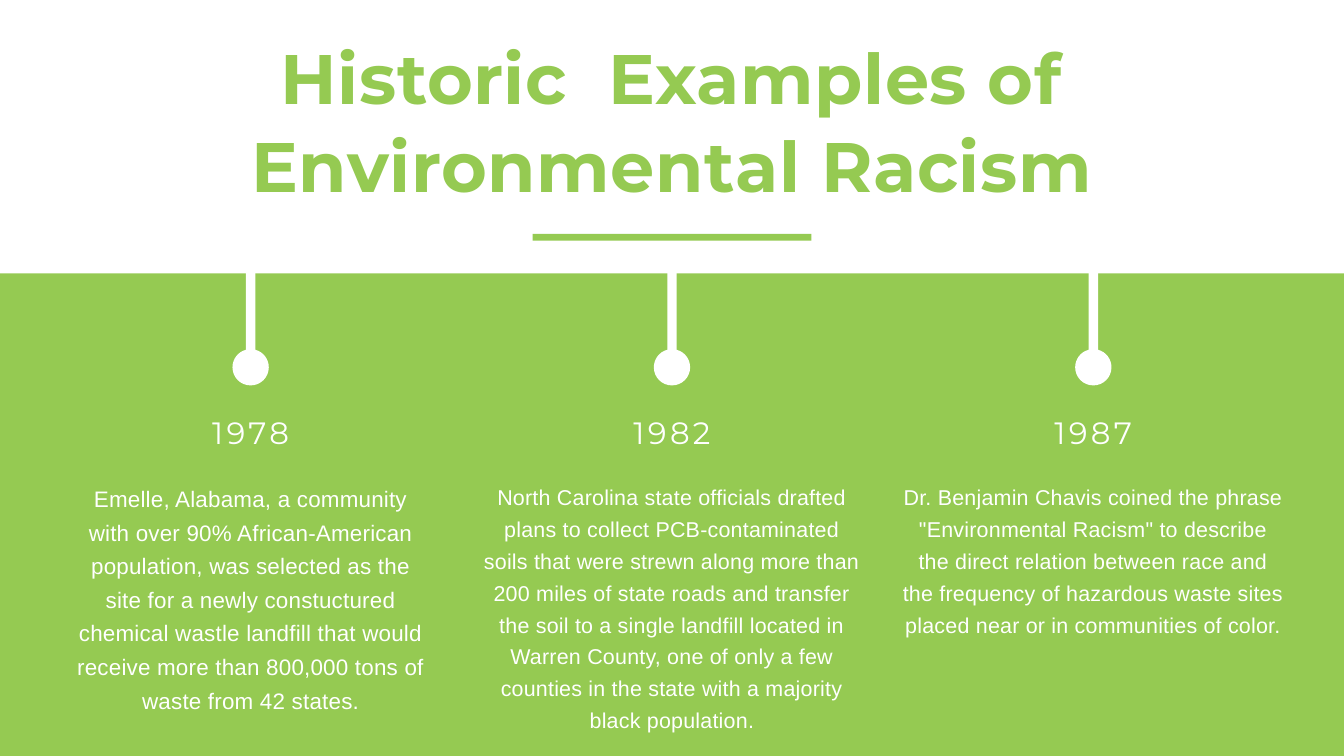
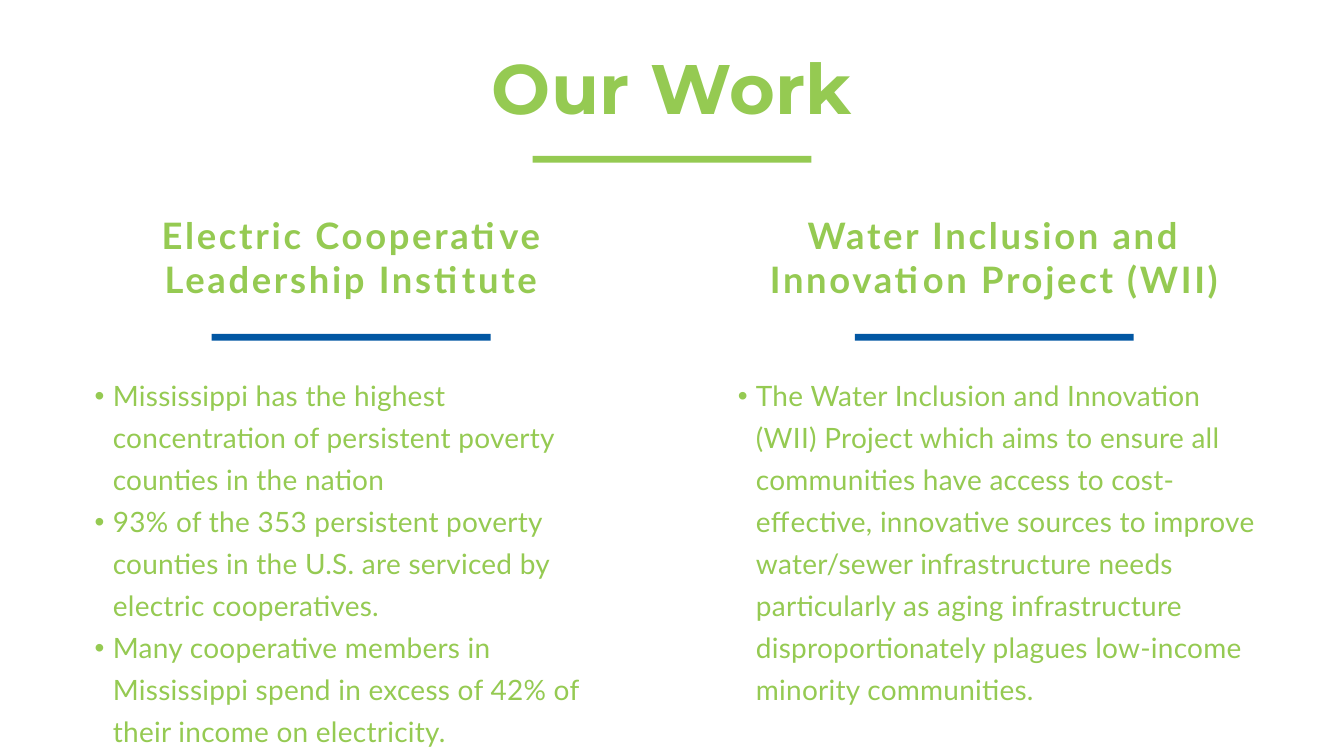
from dataclasses import dataclass

from lxml import etree
from pptx import Presentation
from pptx import util as u
from pptx.dml.color import RGBColor
from pptx.enum import shapes, text
from pptx.oxml import ns

EVENTS = [
    dict(year="1978", width=5.22, height=3.35, size=24, lead=36,
         story="Emelle, Alabama, a community with over 90% African-American "
               "population, was selected as the site for a newly constuctured "
               "chemical wastle landfill that would receive more than 800,000 "
               "tons of waste from 42 states."),
    dict(year="1982", width=5.69, height=3.72, size=23, lead=34.05,
         story="North Carolina state officials drafted plans to collect "
               "PCB-contaminated soils that were strewn along more than 200 "
               "miles of state roads and transfer the soil to a single "
               "landfill located in Warren County, one of only a few counties "
               "in the state with a majority black population."),
    dict(year="1987", width=5.69, height=2.31, size=23, lead=34.05,
         story="Dr. Benjamin Chavis coined the phrase \"Environmental "
               "Racism\" to describe the direct relation between race and the "
               "frequency of hazardous waste sites placed near or in "
               "communities of color."),
]
PROJECTS = [
    dict(name=["Electric Cooperative", "Leadership Institute"], height=5.58,
         points=["Mississippi has the highest concentration of persistent "
                 "poverty counties in the nation",
                 "93% of the 353 persistent poverty counties in the U.S. are "
                 "serviced by electric cooperatives.",
                 "Many cooperative members in Mississippi spend in excess of "
                 "42% of their income on electricity."]),
    dict(name=["Water Inclusion and Innovation Project (WII)"], height=4.95,
         points=["The Water Inclusion and Innovation (WII) Project which aims "
                 "to ensure all communities have access to cost-effective, "
                 "innovative sources to improve water/sewer infrastructure "
                 "needs particularly as aging infrastructure "
                 "disproportionately plagues low-income minority "
                 "communities."]),
]
# A lying pin, dot on the left: one point is a line, three are a curve.
PIN = [
    [(0.53, 0.2)],
    [(0.5, 0.08), (0.39, 0), (0.27, 0)],
    [(0.12, 0), (0, 0.12), (0, 0.27)],
    [(0, 0.42), (0.12, 0.54), (0.27, 0.54)],
    [(0.39, 0.54), (0.5, 0.46), (0.53, 0.34)],
    [(2.54, 0.34)],
    [(2.58, 0.34), (2.61, 0.31), (2.61, 0.27)],
    [(2.61, 0.23), (2.58, 0.2), (2.54, 0.2)],
]


@dataclass(frozen=True)
class Theme:
    green: str = "95CA52"
    blue: str = "0257A3"
    white: str = "FFFFFF"
    head: str = "Montserrat"
    body: str = "Arial"
    work: str = "Lato"
    title: int = 75
    year: int = 33
    name: int = 39
    point: int = 30


T = Theme()
WIDE, HIGH = 20, 11.25
MID = WIDE / 2


def rgb(code):
    return RGBColor.from_string(code)


def box(*place):
    return [u.Inches(n) for n in place]


def paint(shape, color):
    shape.shadow.inherit = False
    shape.fill.solid()
    shape.fill.fore_color.rgb = rgb(color)
    shape.line.fill.background()


def rect(slide, place, color):
    paint(slide.shapes.add_shape(shapes.MSO_SHAPE.RECTANGLE, *box(*place)),
          color)


def rule(slide, mid, top, color):
    """Draw a short bar centred on mid."""
    rect(slide, (mid - 4.15 / 2, top, 4.15, 0.1), color)


def bullet(para):
    props = para._p.get_or_add_pPr()
    props.set("marL", str(u.Inches(0.54)))
    props.set("indent", str(u.Inches(-0.27)))
    para.level = 1
    etree.SubElement(props, ns.qn("a:buFont")).set("typeface", "Arial")
    etree.SubElement(props, ns.qn("a:buChar")).set("char", "•")


def write(shape, lines, *, size, font, color, lead, track, bold=False,
          bullets=False, fit=text.MSO_AUTO_SIZE.SHAPE_TO_FIT_TEXT):
    """Fill a shape, one paragraph per line; lead and track are in points."""
    frame = shape.text_frame
    frame.word_wrap = True
    frame.auto_size = fit
    frame.vertical_anchor = text.MSO_ANCHOR.TOP
    frame.margin_left = frame.margin_right = 0
    frame.margin_top = frame.margin_bottom = 0
    for i, line in enumerate(lines):
        para = frame.add_paragraph() if i else frame.paragraphs[0]
        para.line_spacing = u.Pt(lead)
        para.space_before = u.Pt(0)
        if bullets:
            bullet(para)
        para.alignment = (text.PP_ALIGN.LEFT if bullets
                          else text.PP_ALIGN.CENTER)
        run = para.add_run()
        run.text = line
        run.font.size = u.Pt(size)
        run.font.name = font
        run.font.bold = bold
        run.font.color.rgb = rgb(color)
        run._r.get_or_add_rPr().set("spc", str(round(track * 100)))


def label(slide, place, lines, **style):
    write(slide.shapes.add_textbox(*box(*place)), lines, **style)


def start(deck, color):
    slide = deck.slides.add_slide(deck.slide_layouts[5])
    slide.background.fill.solid()
    slide.background.fill.fore_color.rgb = rgb(color)
    return slide


def head(slide, words, top, height, bar):
    """Place the title in front of what is drawn so far, with its rule."""
    title = slide.shapes.title
    slide.shapes.element.append(title.element)
    title.left, title.top, title.width, title.height = box(
        1.49, top, 17.02, height)
    write(title, [words], size=T.title, font=T.head, color=T.green,
          lead=94.5, track=0.67, bold=True, fit=text.MSO_AUTO_SIZE.NONE)
    rule(slide, MID, bar, T.green)


def pin(slide, mid):
    """Draw a stem that ends in a round dot, as one outline, upright."""
    left, top = mid - 2.61 / 2, 4.16
    spots = [box(left + x, top + y) for part in PIN for x, y in part]
    form = slide.shapes.build_freeform(*spots[-1])
    form.add_line_segments(spots, close=True)
    shape = form.convert_to_shape()
    lines = iter(list(shape.element.iter(ns.qn("a:lnTo"))))
    for part in PIN:
        steps = [next(lines) for _ in part]
        if len(steps) == 3:
            curve = etree.Element(ns.qn("a:cubicBezTo"))
            steps[0].addprevious(curve)
            for step in steps:
                curve.append(step[0])
                step.getparent().remove(step)
    shape.rotation = 270
    paint(shape, T.white)


def history(deck):
    slide = start(deck, T.green)
    mids = [MID + 6.27 * (i - 1) for i in range(len(EVENTS))]
    for mid in mids:
        pin(slide, mid)
    rect(slide, (-0.29, 0, 20.57, 4.07), T.white)
    head(slide, "Historic  Examples of Environmental Racism", 0.45, 2.6, 3.48)
    for mid, event in zip(mids, EVENTS):
        left, width = mid - event["width"] / 2, event["width"]
        label(slide, (left, 6.06, width, 0.6), [event["year"]], size=T.year,
              font=T.head, color=T.white, lead=46.2, track=3.6)
        label(slide, (left, 7.12, width, event["height"]), [event["story"]],
              size=event["size"], font=T.body, color=T.white,
              lead=event["lead"], track=0.23)


def work(deck):
    slide = start(deck, T.white)
    head(slide, "Our Work", 0.6, 1.29, 2.32)
    width = 8.17
    for i, item in enumerate(PROJECTS):
        left = 1.14 + 9.57 * i
        label(slide, (left, 3.17, width, 1.28), item["name"], size=T.name,
              font=T.work, color=T.green, lead=46.8, track=2.9, bold=True)
        rule(slide, left + width / 2, 4.97, T.blue)
        label(slide, (left, 5.51, width, item["height"]), item["points"],
              size=T.point, font=T.work, color=T.green, lead=45, track=0.3,
              bullets=True)


def main():
    deck = Presentation()
    deck.slide_width, deck.slide_height = u.Inches(WIDE), u.Inches(HIGH)
    history(deck)
    work(deck)
    deck.save("out.pptx")


if __name__ == "__main__":
    main()
